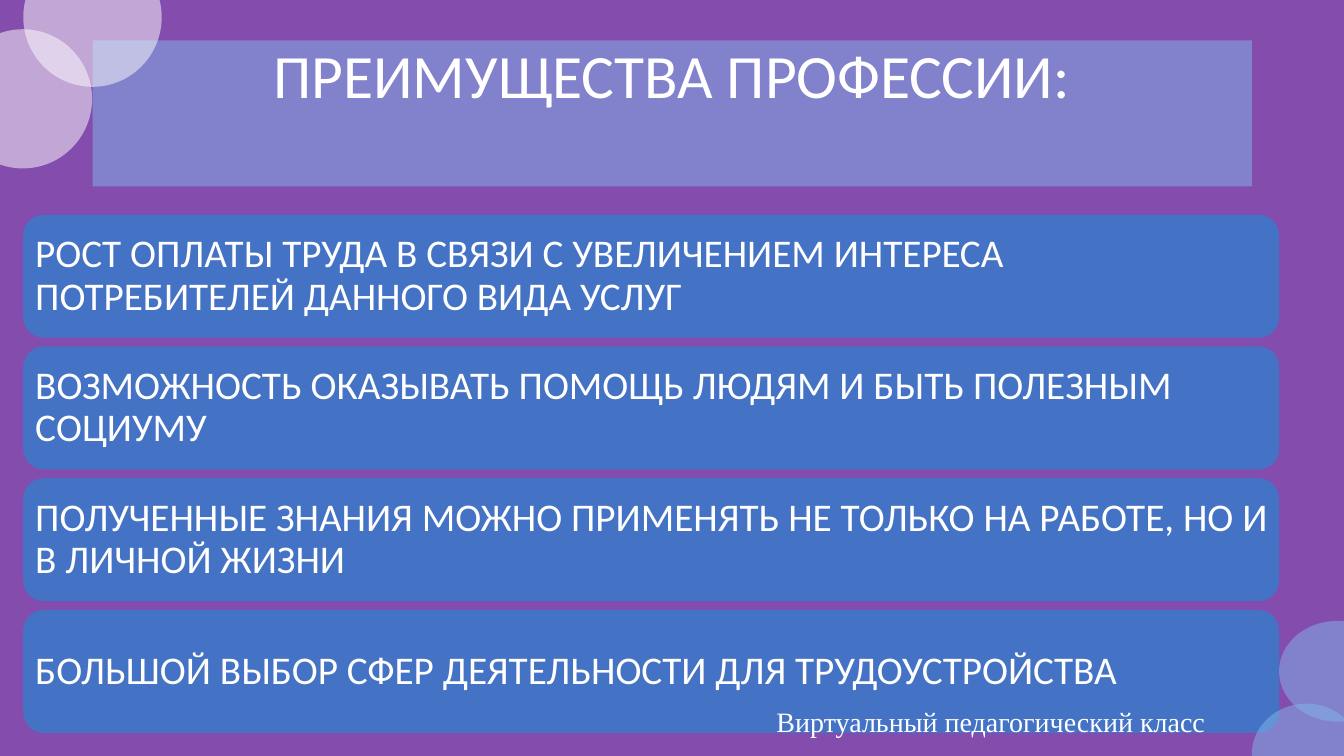
from lxml import etree
from pptx import Presentation
from pptx.dml.color import RGBColor
from pptx.enum.shapes import MSO_SHAPE
from pptx.enum.text import MSO_ANCHOR, PP_ALIGN
from pptx.oxml.ns import qn
from pptx.util import Pt

RECT, ROUNDED, OVAL = MSO_SHAPE.RECTANGLE, MSO_SHAPE.ROUNDED_RECTANGLE, MSO_SHAPE.OVAL
TOP, MIDDLE = MSO_ANCHOR.TOP, MSO_ANCHOR.MIDDLE
LEFT, CENTER = PP_ALIGN.LEFT, PP_ALIGN.CENTER

PURPLE = RGBColor(0x84, 0x4D, 0xAD)
BLUE = RGBColor(0x44, 0x72, 0xC4)
SKY = RGBColor(0x81, 0xB6, 0xEB)
WHITE = RGBColor(0xFF, 0xFF, 0xFF)

ADVANTAGES = [
    "РОСТ ОПЛАТЫ ТРУДА В СВЯЗИ С УВЕЛИЧЕНИЕМ ИНТЕРЕСА ПОТРЕБИТЕЛЕЙ ДАННОГО ВИДА УСЛУГ",
    "ВОЗМОЖНОСТЬ ОКАЗЫВАТЬ ПОМОЩЬ ЛЮДЯМ И БЫТЬ ПОЛЕЗНЫМ СОЦИУМУ",
    "ПОЛУЧЕННЫЕ ЗНАНИЯ МОЖНО ПРИМЕНЯТЬ НЕ ТОЛЬКО НА РАБОТЕ, НО И В ЛИЧНОЙ ЖИЗНИ",
    "БОЛЬШОЙ ВЫБОР СФЕР ДЕЯТЕЛЬНОСТИ ДЛЯ ТРУДОУСТРОЙСТВА",
]
CARD_TOP, CARD_PITCH = 153.4, 94.1

# Left, top, width, height and colour of the corner circles
CIRCLES = [
    (894.2, 502.6, 77.8, 72, SKY),
    (-33.1, 20.9, 98.9, 99.4, WHITE),
    (16.6, -37.4, 98.9, 99.4, WHITE),
    (913.7, 443.5, 83.5, 72, SKY),
]


def add_block(slide, kind, left, top, width, height, color, opacity=100):
    s = slide.shapes.add_shape(kind, Pt(left), Pt(top), Pt(width), Pt(height))
    s.shadow.inherit = False
    s.line.fill.background()
    s.fill.solid()
    s.fill.fore_color.rgb = color
    if opacity < 100:
        clr = s.fill._xPr.find(".//" + qn("a:srgbClr"))
        etree.SubElement(clr, qn("a:alpha")).set("val", str(opacity * 1000))
    return s


def set_text(s, text, size, font="Calibri", align=CENTER, anchor=MIDDLE, spacing=0.9):
    tf = s.text_frame
    tf.word_wrap = True
    tf.vertical_anchor = anchor
    tf.text = text
    p = tf.paragraphs[0]
    p.alignment = align
    p.line_spacing = spacing
    r = p.runs[0]
    r.font.size = Pt(size)
    r.font.name = font
    r.font.color.rgb = WHITE


def add_card(slide, row, text):
    s = add_block(slide, ROUNDED, 16.6, CARD_TOP + row * CARD_PITCH, 897.1, 87.8, BLUE)
    set_text(s, text, 28, align=LEFT)
    tf = s.text_frame
    tf.margin_left = tf.margin_right = Pt(4.3)
    tf.margin_top = tf.margin_bottom = Pt(4.3)


def main():
    prs = Presentation()
    prs.slide_width, prs.slide_height = Pt(960), Pt(540)
    slide = prs.slides.add_slide(prs.slide_layouts[6])
    slide.background.fill.solid()
    slide.background.fill.fore_color.rgb = PURPLE

    # Title band
    title = add_block(slide, RECT, 66.2, 28.8, 828, 104.4, SKY, 50)
    set_text(title, "ПРЕИМУЩЕСТВА ПРОФЕССИИ:", 44, anchor=TOP)

    # Advantage cards
    for row, text in enumerate(ADVANTAGES):
        add_card(slide, row, text)

    # Corner circles
    for left, top, width, height, color in CIRCLES:
        add_block(slide, OVAL, left, top, width, height, color, 50)

    # Footer
    footer = slide.shapes.add_textbox(Pt(522), Pt(504), Pt(371.5), Pt(22.3))
    set_text(footer, "Виртуальный педагогический класс", 20, "Times New Roman", spacing=1.0)

    prs.save("out.pptx")


if __name__ == "__main__":
    main()
